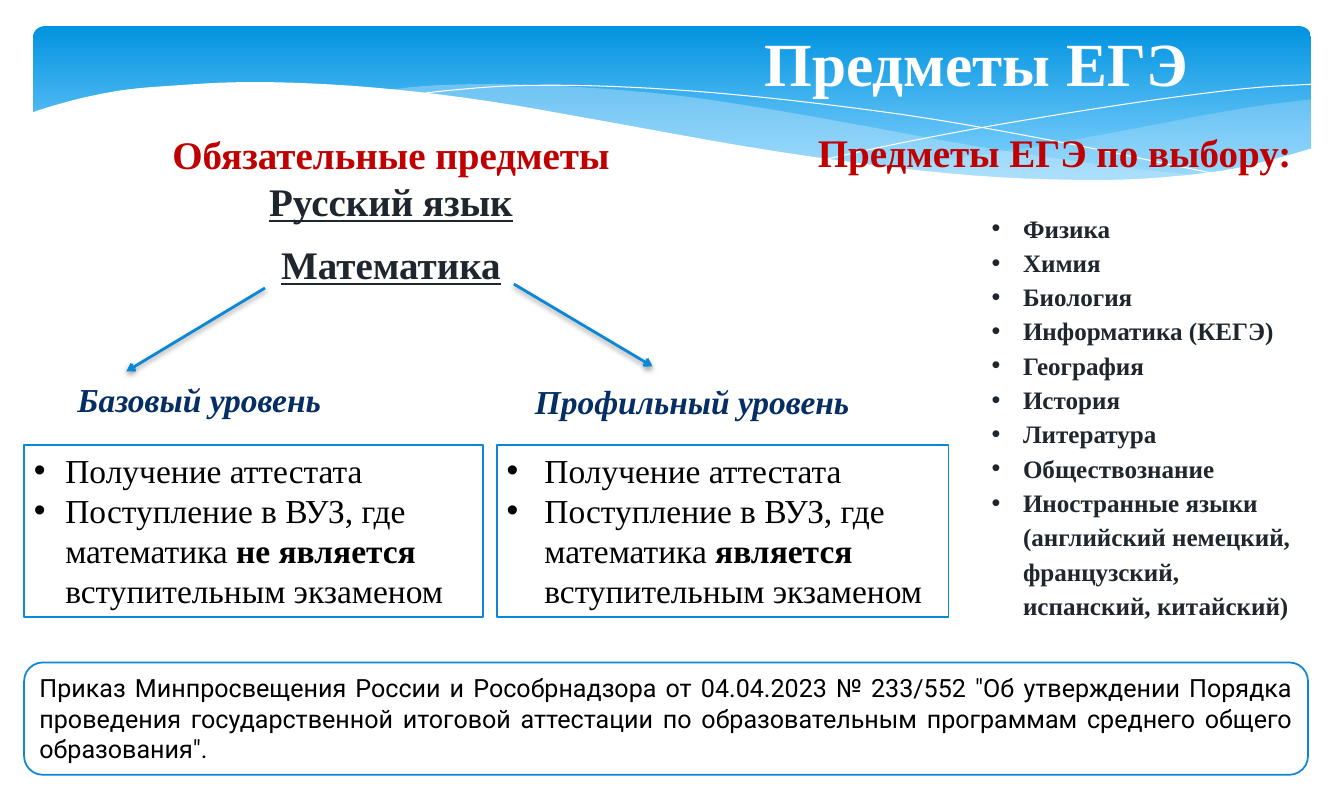
import dataclasses

import pptx
import pptx.dml.color
import pptx.enum.shapes
import pptx.enum.text
import pptx.oxml
import pptx.oxml.ns
import pptx.util

Pt = pptx.util.Pt
Align = pptx.enum.text.PP_ALIGN
Shape = pptx.enum.shapes.MSO_SHAPE
qn = pptx.oxml.ns.qn
DRAWING = pptx.oxml.ns.nsdecls("a")


@dataclasses.dataclass(frozen=True)
class Theme:
    serif: str = "Times New Roman"
    sans: str = "Roboto"
    white: str = "FFFFFF"
    black: str = "000000"
    ink: str = "1F262D"
    red: str = "C00000"
    navy: str = "052E65"
    blue: str = "0B87D6"
    sky: str = "0293E0"
    pale_sky: str = "83D3FE"
    mist: str = "C6E7FC"
    title: int = 44
    heading: int = 28
    body: int = 24
    small: int = 18


def color(code):
    return pptx.dml.color.RGBColor.from_string(code)


def smooth(points, steps=4):
    padded = [points[0], *points, points[-1]]
    curve = [points[0]]
    for before, start, end, after in zip(padded, padded[1:], padded[2:], padded[3:]):
        for step in range(1, steps + 1):
            t = step / steps
            curve.append(tuple(
                (2 * b + (c - a) * t + (2 * a - 5 * b + 4 * c - d) * t ** 2
                 + (3 * b - a - 3 * c + d) * t ** 3) / 2
                for a, b, c, d in zip(before, start, end, after)))
    return curve


def add_span(para, text, size, ink, font, bold=False, italic=False, underline=False):
    span = para.add_run()
    span.text = text
    span.font.size = Pt(size)
    span.font.name = font
    span.font.color.rgb = color(ink)
    span.font.bold = bold
    span.font.italic = italic
    span.font.underline = underline


class Painter:
    def __init__(self, page, theme):
        self.page = page
        self.theme = theme

    def fill_text(self, frame, paragraphs, align=Align.LEFT, spacing=None, indent=0, gaps=(),
                  **style):
        frame.word_wrap = True
        frame.vertical_anchor = pptx.enum.text.MSO_ANCHOR.TOP
        for index, spans in enumerate(paragraphs):
            para = frame.paragraphs[0] if index == 0 else frame.add_paragraph()
            para.alignment = align
            if indent:
                properties = para._p.get_or_add_pPr()
                properties.set("marL", str(Pt(indent)))
                properties.set("indent", str(-Pt(indent)))
                for mark in ('buFont {} typeface="Arial"', 'buChar {} char="•"'):
                    properties.append(pptx.oxml.parse_xml(f"<a:{mark.format(DRAWING)}/>"))
            if spacing:
                para.line_spacing = spacing
            if index in gaps:
                para.space_before = Pt(gaps[index])
            for text, extra in spans:
                add_span(para, text, **{"font": self.theme.serif, **style, **extra})

    def text(self, place, paragraphs, **style):
        box = self.page.shapes.add_textbox(*map(Pt, place))
        self.fill_text(box.text_frame, paragraphs, **style)

    def panel(self, kind, place, paragraphs, **style):
        box = self.page.shapes.add_shape(kind, *map(Pt, place))
        box.shadow.inherit = False
        box.fill.solid()
        box.fill.fore_color.rgb = color(self.theme.white)
        box.line.color.rgb = color(self.theme.blue)
        box.line.width = Pt(1.25)
        self.fill_text(box.text_frame, paragraphs, ink=self.theme.black, **style)

    def banner(self, place):
        box = self.page.shapes.add_shape(Shape.ROUNDED_RECTANGLE, *map(Pt, place))
        box.adjustments[0] = 0.07
        box.shadow.inherit = False
        box.line.fill.background()
        box.fill.gradient()
        box.fill.gradient_angle = 270
        stops = ((0, self.theme.sky), (0.9, self.theme.pale_sky))
        for stop, (position, code) in zip(box.fill.gradient_stops, stops):
            stop.position = position
            stop.color.rgb = color(code)

    def outline(self, points, closed):
        scaled = [(round(x * 100), round(y * 100)) for x, y in points]
        builder = self.page.shapes.build_freeform(*scaled[0], scale=Pt(1) / 100)
        builder.add_line_segments(scaled[1:], close=closed)
        shape = builder.convert_to_shape()
        shape.shadow.inherit = False
        return shape

    def wave(self, points, fill, opacity=100):
        wave = self.outline(points, True)
        wave.line.fill.background()
        wave.fill.solid()
        wave.fill.fore_color.rgb = color(fill)
        if opacity < 100:
            tint = wave._element.spPr.find(qn("a:solidFill")).find(qn("a:srgbClr"))
            tint.append(pptx.oxml.parse_xml(f'<a:alpha {DRAWING} val="{opacity * 1000}"/>'))

    def thread(self, points):
        thread = self.outline(smooth(points), False)
        thread.fill.background()
        thread.line.color.rgb = color(self.theme.white)
        thread.line.width = Pt(0)

    def arrow(self, start, end):
        arrow = self.page.shapes.add_connector(
            pptx.enum.shapes.MSO_CONNECTOR.STRAIGHT, *map(Pt, (*start, *end)))
        arrow.line.color.rgb = color(self.theme.blue)
        arrow.line.width = Pt(2)
        arrow._element.spPr.find(qn("a:ln")).append(
            pptx.oxml.parse_xml(f'<a:tailEnd {DRAWING} type="arrow"/>'))
        arrow._element.spPr.append(pptx.oxml.parse_xml(
            f'<a:effectLst {DRAWING}><a:outerShdw blurRad="{Pt(4)}" dist="{Pt(2)}" dir="5400000" '
            f'rotWithShape="0"><a:srgbClr val="{self.theme.black}"><a:alpha val="38000"/>'
            '</a:srgbClr></a:outerShdw></a:effectLst>'))


def draw_header(painter, theme):
    painter.banner((23.8, 18.7, 916.5, 118))
    right_top = [(940.3, 71.3), (900.7, 76.3), (859, 83.5), (829.4, 89.3), (751, 103.7),
                 (680.4, 114.5), (637.2, 121)]
    right_bottom = [(637.2, 121), (692.6, 125.3), (752.4, 129.6), (804.2, 129.6),
                    (848.9, 127.4), (887.8, 121), (928.1, 110.9), (940.3, 107.3)]
    painter.wave(smooth(right_top) + smooth(right_bottom), theme.mist, 29)
    long_top = [(860.4, 126), (807.1, 120.2), (747.4, 112.3), (680.4, 101.5), (606.2, 87.8),
                (548.6, 77.8), (496.1, 69.8), (447.8, 64.8), (404.6, 61.9), (365.8, 60.5),
                (331.9, 60.5), (301.7, 61.9), (275.8, 64.8)]
    long_bottom = [(275.8, 64.8), (311, 68.4), (369.4, 76.3), (433.4, 87.8), (510.5, 102.2),
                   (579.6, 113), (641.5, 121.7), (696.2, 126.7), (745.2, 130.3), (788.4, 131),
                   (835.2, 128.9), (860.4, 126)]
    painter.wave(smooth(long_top) + smooth(long_bottom), theme.mist, 40)
    painter.thread([(298, 67.7), (323.3, 64.8), (360.7, 61.9), (401, 61.2), (452.2, 62.6),
                    (513.4, 66.7), (586, 74.2), (670.3, 85.7), (766.1, 103), (836, 117.4),
                    (874.8, 125.3)])
    painter.thread([(591.1, 114.5), (648, 102.2), (720.7, 88.6), (805.7, 74.9), (863.3, 67),
                    (903.6, 62.6), (940.3, 60.5)])
    crest = [(941.8, 106.2), (915, 113.8), (877, 122.4), (819.4, 128.2), (764.6, 128.9),
             (699.8, 126), (624.2, 118.1), (535, 105.1), (430.6, 86.4), (351.4, 72.7),
             (282.2, 64.1), (221.8, 59.8), (169.9, 59), (127.4, 61.2), (92.2, 64.1),
             (64.1, 69.1), (44, 74.2), (27.4, 79.2), (22.3, 81.4)]
    painter.wave(smooth(crest) + [(22.3, 169.2), (941.8, 169.2)], theme.white)


def main():
    theme = Theme()
    deck = pptx.Presentation()
    deck.slide_width, deck.slide_height = Pt(964), Pt(567.4)
    painter = Painter(deck.slides.add_slide(deck.slide_layouts[6]), theme)
    draw_header(painter, theme)

    painter.text((541.4, 14.4, 360, 60.5), [[("Предметы ЕГЭ", {})]],
                 size=theme.title, ink=theme.white, bold=True)
    subject = {"ink": theme.ink, "underline": True}
    painter.text((33.8, 90, 493.2, 121),
                 [[("Обязательные предметы", {})], [("Русский язык", subject)],
                  [("Математика", subject)]],
                 align=Align.CENTER, gaps={2: 12}, size=theme.heading, ink=theme.red, bold=True)

    levels = (
        ("Базовый уровень", (32.4, 254.2, 221, 51.1), (17.3, 319, 329, 123.8), 22.5, "не является "),
        ("Профильный уровень", (331.9, 255.6, 329, 51.1), (356.4, 319, 324, 123.8), 27, "является "),
    )
    for level, label_place, panel_place, indent, verdict in levels:
        painter.text(label_place, [[(level, {})]], align=Align.CENTER, spacing=1.5,
                     size=theme.body, ink=theme.navy, bold=True, italic=True)
        painter.panel(Shape.RECTANGLE, panel_place,
                      [[("Получение аттестата", {})],
                       [("Поступление в ВУЗ, где математика ", {}), (verdict, {"bold": True}),
                        ("вступительным экзаменом", {})]], indent=indent, size=theme.body)

    order = ('Приказ Минпросвещения России и Рособрнадзора от 04.04.2023 № 233/552 '
             '"Об утверждении Порядка проведения государственной итоговой аттестации '
             'по образовательным программам среднего общего образования".')
    painter.panel(Shape.ROUNDED_RECTANGLE, (17.3, 475.2, 920.9, 80.6), [[(order, {})]],
                  align=Align.JUSTIFY, size=theme.small, font=theme.sans)

    painter.text((575.3, 88.6, 362.2, 41), [[("Предметы ЕГЭ по выбору:", {})]],
                 align=Align.CENTER, size=theme.heading, ink=theme.red, bold=True)
    electives = ("Физика", "Химия", "Биология", "Информатика (КЕГЭ)", "География", "История",
                 "Литература", "Обществознание",
                 "Иностранные языки (английский немецкий, французский, испанский, китайский)")
    painter.text((704.2, 146.2, 233.3, 306), [[(name, {})] for name in electives],
                 spacing=1.14, indent=22.5, size=theme.small, ink=theme.ink, bold=True)

    painter.arrow((368.6, 203.8), (468, 262.8))
    painter.arrow((190.1, 206.6), (90.7, 266.4))
    deck.save("out.pptx")


if __name__ == "__main__":
    main()
